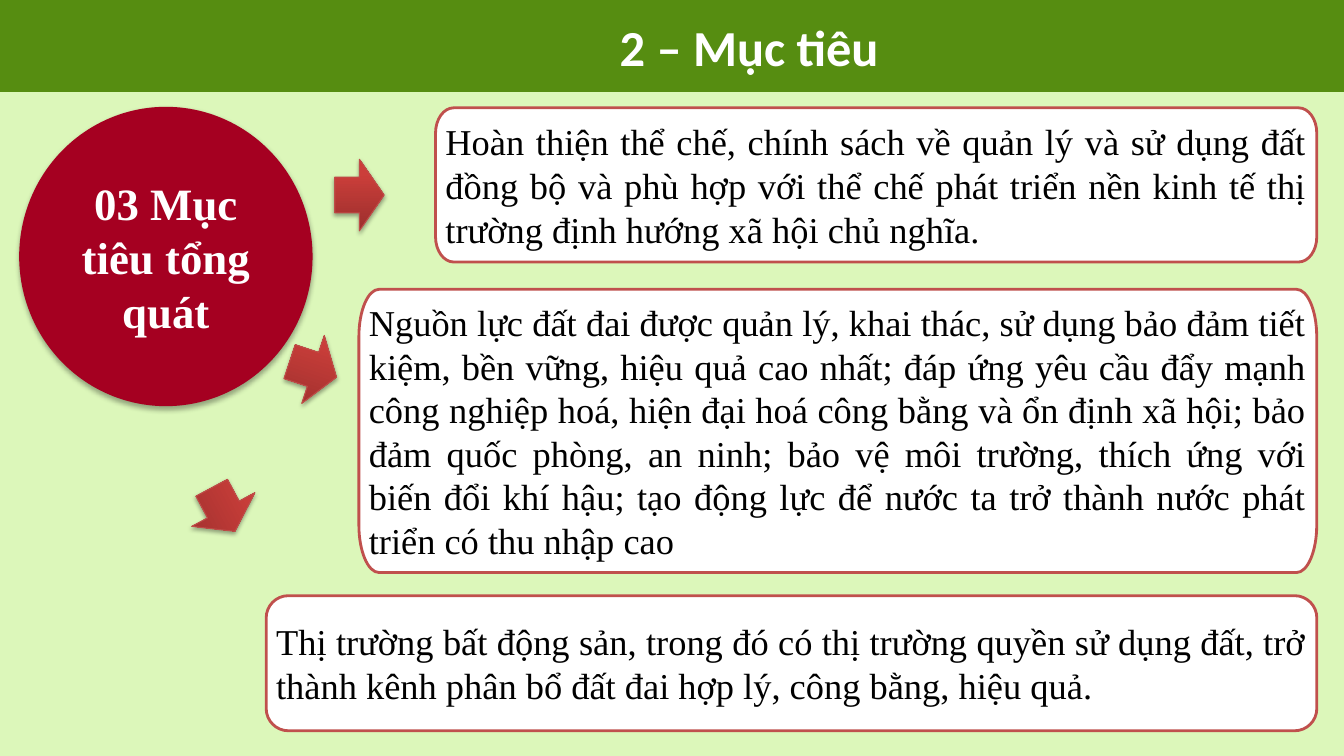
from dataclasses import dataclass

from pptx import Presentation
from pptx.dml.color import RGBColor
from pptx.enum.shapes import MSO_SHAPE as Preset
from pptx.enum.text import MSO_ANCHOR as Anchor, MSO_AUTO_SIZE as AutoSize, PP_ALIGN as Align
from pptx.oxml import parse_xml
from pptx.oxml.ns import nsdecls, qn
from pptx.util import Emu, Pt

EMU_PER_PX = 9144
ARC_PULL = 0.55
SERIF, SANS = "Times New Roman", "Calibri"
GREEN = RGBColor(0x56, 0x8D, 0x11)
LIGHT_GREEN = RGBColor(0xDC, 0xF7, 0xBA)
CRIMSON = RGBColor(0xA5, 0x00, 0x21)
BORDER_RED = RGBColor(0xC0, 0x50, 0x4D)
ARROW_EDGE = RGBColor(0xBF, 0x4C, 0x48)
WHITE = RGBColor(0xFF, 0xFF, 0xFF)
BLACK = RGBColor(0x00, 0x00, 0x00)
ARROW_STOPS = (
    (0, RGBColor(0x9C, 0x2F, 0x2D)),
    (80, RGBColor(0xCB, 0x3E, 0x3A)),
    (100, RGBColor(0xCE, 0x3B, 0x37)),
)
TITLE_FONT = {"name": SANS, "size": Pt(36), "bold": True}
CIRCLE_FONT = {"name": SERIF, "size": Pt(32), "bold": True}
GOAL_FONT = {"name": SERIF, "size": Pt(26), "bold": False}


@dataclass(frozen=True)
class Goal:
    left: int
    top: int
    width: int
    height: int
    corner_width: int
    corner_height: int
    text: str


@dataclass(frozen=True)
class Arrow:
    left: int
    top: int
    rotation: float


@dataclass(frozen=True)
class Shadow:
    blur: float
    distance: float
    opacity: int


GOALS = (
    Goal(432, 107, 874, 153, 18, 25,
         "Hoàn thiện thể chế, chính sách về quản lý và sử dụng đất đồng bộ và phù hợp "
         "với thể chế phát triển nền kinh tế thị trường định hướng xã hội chủ nghĩa."),
    Goal(356, 287, 950, 281, 20, 47,
         "Nguồn lực đất đai được quản lý, khai thác, sử dụng bảo đảm tiết kiệm, bền vững, "
         "hiệu quả cao nhất; đáp ứng yêu cầu đẩy mạnh công nghiệp hoá, hiện đại hoá công "
         "bằng và ổn định xã hội; bảo đảm quốc phòng, an ninh; bảo vệ môi trường, thích ứng "
         "với biến đổi khí hậu; tạo động lực để nước ta trở thành nước phát triển có thu "
         "nhập cao"),
    Goal(264, 591, 1042, 134, 22, 22,
         "Thị trường bất động sản, trong đó có thị trường quyền sử dụng đất, trở thành kênh "
         "phân bổ đất đai hợp lý, công bằng, hiệu quả."),
)
ARROWS = (Arrow(332, 158, 0), Arrow(286, 331, 18.3), Arrow(197, 470, 61.9))
CIRCLE_SHADOW = Shadow(3.5, 2.2, 32)
ARROW_SHADOW = Shadow(3.1, 1.8, 35)


def px(length: float) -> Emu:
    return Emu(round(length * EMU_PER_PX))


def write(shape, text: str, font: dict, color: RGBColor, align: Align, anchor: Anchor):
    frame = shape.text_frame
    frame.word_wrap = True
    frame.vertical_anchor = anchor
    para = frame.paragraphs[0]
    para.alignment = align
    span = para.add_run()
    span.text = text
    for name, value in font.items():
        setattr(span.font, name, value)
    span.font.color.rgb = color
    return para


def paint(shape, fill: RGBColor, line: RGBColor | None = None, width: float = 0) -> None:
    shape.shadow.inherit = False
    shape.fill.solid()
    shape.fill.fore_color.rgb = fill
    if line is None:
        shape.line.fill.background()
    else:
        shape.line.color.rgb = line
        shape.line.width = Pt(width)


def cast_shadow(shape, shadow: Shadow) -> None:
    shape.shadow.inherit = False
    effects = shape.element.spPr.find(qn("a:effectLst"))
    effects.append(parse_xml(
        f'<a:outerShdw {nsdecls("a")} blurRad="{Pt(shadow.blur)}" dist="{Pt(shadow.distance)}" '
        f'dir="5400000" rotWithShape="0"><a:srgbClr val="{BLACK}">'
        f'<a:alpha val="{shadow.opacity * 1000}"/></a:srgbClr></a:outerShdw>'))


def draw_master(deck, page) -> None:
    header = page.shapes.add_shape(Preset.RECTANGLE, px(0), px(0), px(1333), px(750))
    paint(header, GREEN)
    panel = page.shapes.add_shape(Preset.RECTANGLE, px(0), px(92), px(1333), px(658))
    paint(panel, LIGHT_GREEN, LIGHT_GREEN, 1.25)
    tree = deck.slide_master.shapes.element
    for position, shape in enumerate((header, panel), start=2):
        tree.insert(position, shape.element)


def draw_title(page) -> None:
    title = page.shapes.title
    place = {"left": px(164), "top": px(11), "width": px(1153), "height": px(71)}
    for name, value in place.items():
        setattr(title, name, value)
    para = write(title, "2 – Mục tiêu", TITLE_FONT, WHITE, Align.CENTER, Anchor.TOP)
    title.text_frame.auto_size = AutoSize.SHAPE_TO_FIT_TEXT
    properties = para._p.get_or_add_pPr()
    properties.set("marL", str(px(5)))
    properties.set("indent", "0")


def pull(start: tuple, target: tuple) -> tuple:
    return tuple(a + ARC_PULL * (b - a) for a, b in zip(start, target))


def draw_goal(page, goal: Goal) -> None:
    width, height = goal.width, goal.height
    near_x, near_y = goal.corner_width, goal.corner_height
    far_x, far_y = width - near_x, height - near_y
    corners = (
        ((0, near_y), (0, 0), (near_x, 0)),
        ((far_x, 0), (width, 0), (width, near_y)),
        ((width, far_y), (width, height), (far_x, height)),
        ((near_x, height), (0, height), (0, far_y)),
    )
    points = [(px(goal.left + x), px(goal.top + y))
              for start, _, end in corners for x, y in (start, end)]
    outline = page.shapes.build_freeform(*points[0], scale=1.0)
    outline.add_line_segments(points[1:], close=True)
    box = outline.convert_to_shape()
    sides = list(box.element.spPr.iter(qn("a:lnTo")))
    for side, (start, tip, end) in zip(sides[::2], corners):
        controls = "".join(f'<a:pt x="{px(x)}" y="{px(y)}"/>'
                           for x, y in (pull(start, tip), pull(end, tip), end))
        curve = parse_xml(f'<a:cubicBezTo {nsdecls("a")}>{controls}</a:cubicBezTo>')
        side.getparent().replace(side, curve)
    paint(box, WHITE, BORDER_RED, 2)
    write(box, goal.text, GOAL_FONT, BLACK, Align.JUSTIFY, Anchor.MIDDLE)


def draw_circle(page) -> None:
    circle = page.shapes.add_shape(Preset.OVAL, px(19), px(106), px(291), px(297))
    paint(circle, CRIMSON)
    cast_shadow(circle, CIRCLE_SHADOW)
    write(circle, "03 Mục tiêu tổng quát", CIRCLE_FONT, WHITE, Align.CENTER, Anchor.MIDDLE)


def draw_arrow(page, arrow: Arrow) -> None:
    shape = page.shapes.add_shape(
        Preset.RIGHT_ARROW, px(arrow.left), px(arrow.top), px(49), px(71))
    shape.rotation = arrow.rotation
    paint(shape, ARROW_STOPS[0][1], ARROW_EDGE, 0.75)
    shape.fill.gradient()
    shape.fill.gradient_angle = 90
    gradient = shape.element.spPr.find(qn("a:gradFill"))
    stops = "".join(f'<a:gs pos="{position * 1000}"><a:srgbClr val="{color}"/></a:gs>'
                    for position, color in ARROW_STOPS)
    gradient.replace(gradient.find(qn("a:gsLst")),
                     parse_xml(f'<a:gsLst {nsdecls("a")}>{stops}</a:gsLst>'))
    cast_shadow(shape, ARROW_SHADOW)


def main() -> None:
    deck = Presentation()
    deck.slide_width, deck.slide_height = px(1333), px(750)
    page = deck.slides.add_slide(deck.slide_layouts[5])
    draw_master(deck, page)
    draw_title(page)
    draw_goal(page, GOALS[0])
    draw_circle(page)
    for goal in GOALS[1:]:
        draw_goal(page, goal)
    for arrow in ARROWS:
        draw_arrow(page, arrow)
    deck.save("out.pptx")


if __name__ == "__main__":
    main()
